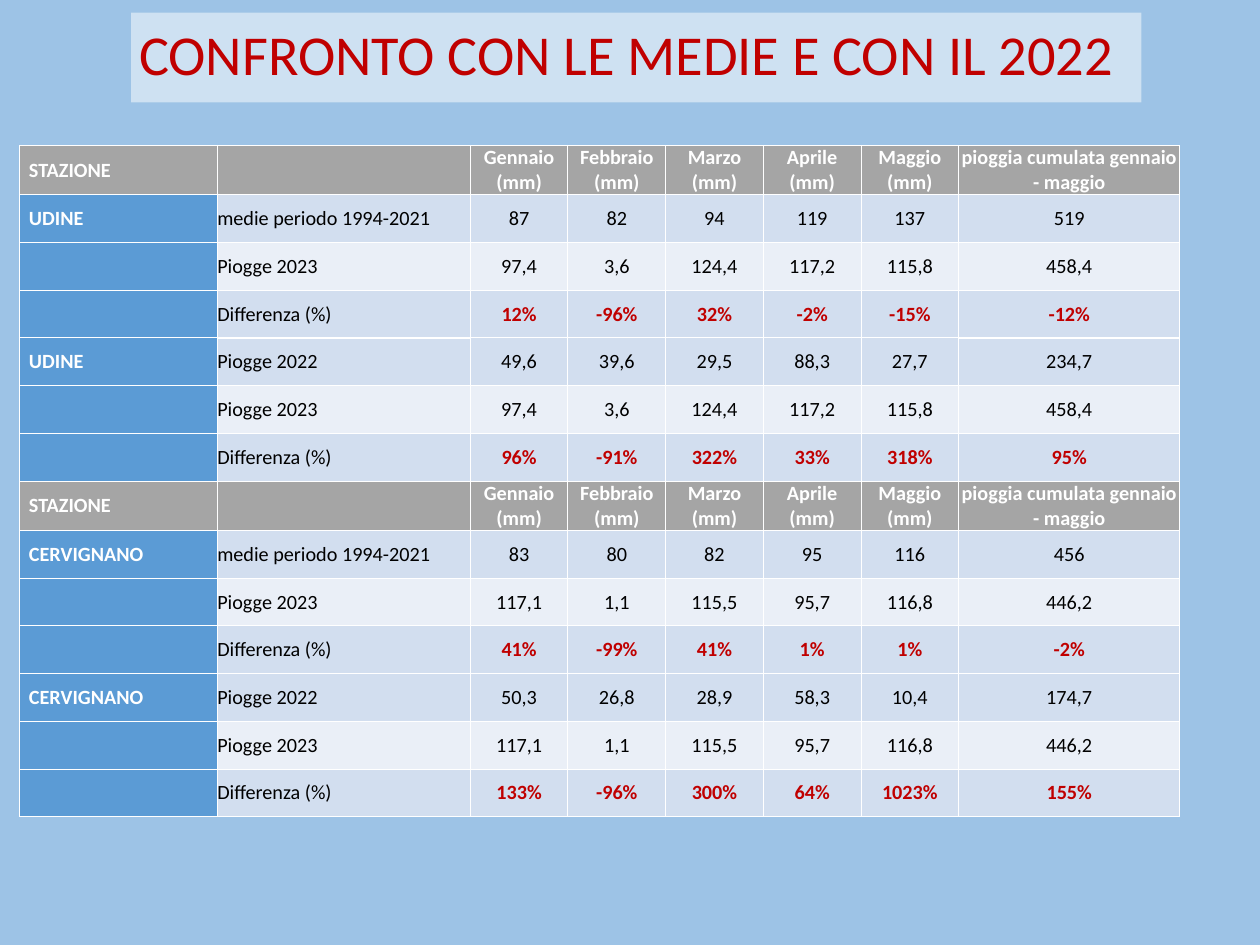
from dataclasses import dataclass

from lxml import etree
from pptx import Presentation
from pptx.dml.color import RGBColor
from pptx.enum import text
from pptx.oxml import ns
from pptx.util import Cm, Pt


@dataclass(frozen=True)
class Theme:
    font: str = "Calibri"
    title_size: float = 50.2
    table_size: float = 18
    background: str = "9DC3E6"
    header: str = "A5A5A5"
    station: str = "5B9BD5"
    band_dark: str = "D2DEEF"
    band_light: str = "EAEFF7"
    white: str = "FFFFFF"
    black: str = "000000"
    red: str = "C00000"


THEME = Theme()


def style_run(run, size, color, bold):
    run.font.name = THEME.font
    run.font.size = Pt(size)
    run.font.bold = bold
    run.font.color.rgb = RGBColor.from_string(color)


def add_border(cell, side, width):
    """Draw one white cell edge; side is L, R, T or B and width is in points."""
    properties = cell._tc.get_or_add_tcPr()
    line = etree.SubElement(properties, ns.qn(f"a:ln{side}"), w=str(Pt(width)))
    fill = etree.SubElement(line, ns.qn("a:solidFill"))
    etree.SubElement(fill, ns.qn("a:srgbClr"), val=THEME.white)


prs = Presentation()
prs.slide_width, prs.slide_height = Cm(39.6), Cm(29.7)
slide = prs.slides.add_slide(prs.slide_layouts[5])
slide.background.fill.solid()
slide.background.fill.fore_color.rgb = RGBColor.from_string(THEME.background)

# Title on a half-transparent white band
title = slide.shapes.title
title.left, title.top, title.width, title.height = Cm(4.12), Cm(0.4), Cm(31.75), Cm(2.82)
title.fill.solid()
title.fill.fore_color.rgb = RGBColor.from_string(THEME.white)
band_color = title.fill._xPr.find(".//" + ns.qn("a:srgbClr"))
etree.SubElement(band_color, ns.qn("a:alpha"), val="50000")
heading = title.text_frame
heading.text = "CONFRONTO CON LE MEDIE E CON IL 2022"
heading.word_wrap = True
heading.auto_size = text.MSO_AUTO_SIZE.NONE
heading.vertical_anchor = text.MSO_ANCHOR.MIDDLE
heading.paragraphs[0].alignment = text.PP_ALIGN.LEFT
heading.paragraphs[0].line_spacing = 0.9
style_run(heading.paragraphs[0].runs[0], THEME.title_size, THEME.red, False)

# Rainfall by station: January to May, then the cumulated total
months = ["Gennaio", "Febbraio", "Marzo", "Aprile", "Maggio"]
header = ["STAZIONE", "", *[f"{month} (mm)" for month in months],
          "pioggia cumulata gennaio - maggio"]
stations = [
    {
        "name": "UDINE",
        "means": ["87", "82", "94", "119", "137", "519"],
        "2022": ["49,6", "39,6", "29,5", "88,3", "27,7", "234,7"],
        "2023": ["97,4", "3,6", "124,4", "117,2", "115,8", "458,4"],
        "versus means": ["12%", "-96%", "32%", "-2%", "-15%", "-12%"],
        "versus 2022": ["96%", "-91%", "322%", "33%", "318%", "95%"],
    },
    {
        "name": "CERVIGNANO",
        "means": ["83", "80", "82", "95", "116", "456"],
        "2022": ["50,3", "26,8", "28,9", "58,3", "10,4", "174,7"],
        "2023": ["117,1", "1,1", "115,5", "95,7", "116,8", "446,2"],
        "versus means": ["41%", "-99%", "41%", "1%", "1%", "-2%"],
        "versus 2022": ["133%", "-96%", "300%", "64%", "1023%", "155%"],
    },
]

rows = []
for station in stations:
    rows.append(("header", header))
    for label, reference in [("medie periodo 1994-2021", "means"), ("Piogge 2022", "2022")]:
        rows += [
            ("reference", [station["name"], label, *station[reference]]),
            ("current", ["", "Piogge 2023", *station["2023"]]),
            ("difference", ["", "Differenza (%)", *station[f"versus {reference}"]]),
        ]

# Row kind: fill, colour of the values, bold values
row_styles = {
    "header": (THEME.header, THEME.white, True),
    "reference": (THEME.band_dark, THEME.black, False),
    "current": (THEME.band_light, THEME.black, False),
    "difference": (THEME.band_dark, THEME.red, True),
}

column_widths = [6.22, 7.95, *[3.07] * len(months), 6.95]
row_height = 1.5
rainfall = slide.shapes.add_table(
    len(rows), len(header), Cm(0.61), Cm(4.57),
    Cm(sum(column_widths)), Cm(row_height * len(rows))).table
for column, width in zip(rainfall.columns, column_widths):
    column.width = Cm(width)

for r, (kind, values) in enumerate(rows):
    rainfall.rows[r].height = Cm(row_height)
    row_fill, value_color, value_bold = row_styles[kind]
    opens_block = kind == "reference"
    closes_block = r + 1 < len(rows) and rows[r + 1][0] == "reference"
    for c, value in enumerate(values):
        cell = rainfall.cell(r, c)
        thick = 1.5 if c in (1, len(header) - 1) else 1
        for side, width in [("L", 1), ("R", 1), ("T", thick if opens_block else 1),
                            ("B", thick if closes_block else 1)]:
            add_border(cell, side, width)

        fill, color, bold = row_fill, value_color, value_bold
        if c == 0:
            fill = THEME.header if kind == "header" else THEME.station
            color, bold = THEME.white, True
        elif c == 1:
            color, bold = THEME.black, False
        cell.fill.solid()
        cell.fill.fore_color.rgb = RGBColor.from_string(fill)

        cell.margin_left = Cm(0.3) if c == 0 else 0
        cell.margin_right = cell.margin_top = cell.margin_bottom = 0
        cell.vertical_anchor = text.MSO_ANCHOR.MIDDLE
        if value:
            paragraph = cell.text_frame.paragraphs[0]
            paragraph.text = value
            paragraph.alignment = text.PP_ALIGN.CENTER if c > 1 else text.PP_ALIGN.LEFT
            style_run(paragraph.runs[0], THEME.table_size, color, bold)

prs.save("out.pptx")
